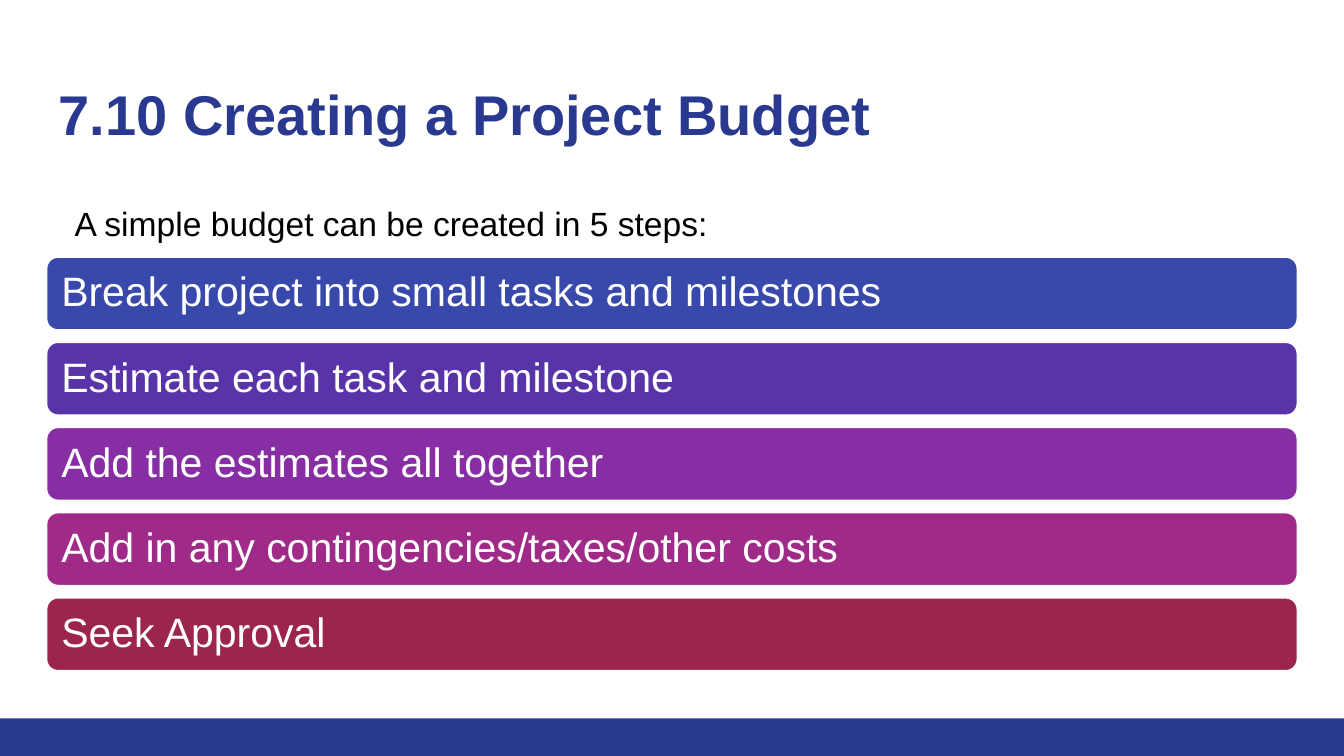
from pptx import Presentation
from pptx.dml.color import RGBColor
from pptx.enum.shapes import MSO_SHAPE
from pptx.enum.text import MSO_ANCHOR, MSO_AUTO_SIZE, PP_ALIGN
from pptx.oxml.ns import qn
from pptx.util import Cm, Pt
from lxml import etree

RECTANGLE, ROUNDED = MSO_SHAPE.RECTANGLE, MSO_SHAPE.ROUNDED_RECTANGLE
TOP, MIDDLE = MSO_ANCHOR.TOP, MSO_ANCHOR.MIDDLE
LEFT = PP_ALIGN.LEFT
NO_FIT = MSO_AUTO_SIZE.NONE

COLOURS = {
    "navy": "2A3990",
    "black": "000000",
    "white": "FFFFFF",
    "blue": "3949AB",
    "violet": "5834A8",
    "purple": "882EA4",
    "magenta": "A02A87",
    "crimson": "9C254D",
}
STEPS = [
    ("Break project into small tasks and milestones", "blue"),
    ("Estimate each task and milestone", "violet"),
    ("Add the estimates all together", "purple"),
    ("Add in any contingencies/taxes/other costs", "magenta"),
    ("Seek Approval", "crimson"),
]
PAGE_WIDTH, PAGE_HEIGHT = 25.4, 14.29
MARGIN = 0.86
CONTENT_WIDTH = PAGE_WIDTH - 2 * MARGIN
FOOTER_HEIGHT = 0.71
STEP_TOP, STEP_HEIGHT, STEP_PITCH = 4.84, 1.42, 1.61


class SlideBuilder:
    font = "Arial"

    def __init__(self, slide):
        self.slide = slide

    def colour(self, name):
        return RGBColor.from_string(COLOURS[name])

    def add_text(self, box, text, size, colour, inset, inset_top, anchor,
                 bold=False, spacing=1.0):
        frame = box.text_frame
        frame.word_wrap = True
        frame.auto_size = NO_FIT
        frame.vertical_anchor = anchor
        frame.margin_left = frame.margin_right = frame.margin_bottom = Cm(inset)
        frame.margin_top = Cm(inset_top)
        para = frame.paragraphs[0]
        para.alignment = LEFT
        para.line_spacing = spacing
        para.space_before = Pt(0)
        span = para.add_run()
        span.text = text
        span.font.name = self.font
        span.font.size = Pt(size)
        span.font.bold = bold
        span.font.color.rgb = self.colour(colour)
        return para

    def place(self, box, top, height):
        box.left, box.top = Cm(MARGIN), Cm(top)
        box.width, box.height = Cm(CONTENT_WIDTH), Cm(height)

    def title(self, text):
        box = self.slide.shapes.title
        self.place(box, 1.14, 1.68)
        self.add_text(box, text, 30, "navy", 0.25, 0.36, TOP, bold=True)

    def intro(self, text):
        box = self.slide.placeholders[1]
        self.place(box, 3.43, 1.68)
        para = self.add_text(box, text, 18, "black", 0.25, 0.3, TOP, spacing=1.15)
        properties = para._p.get_or_add_pPr()
        properties.set("marL", str(Cm(0.3)))
        properties.set("indent", "0")
        etree.SubElement(properties, qn("a:buNone"))

    def bar(self, kind, left, top, width, height, colour):
        shape = self.slide.shapes.add_shape(
            kind, Cm(left), Cm(top), Cm(width), Cm(height))
        shape.shadow.inherit = False
        shape.fill.solid()
        shape.fill.fore_color.rgb = self.colour(colour)
        shape.line.fill.background()
        return shape

    def step(self, index, text, colour):
        top = STEP_TOP + index * STEP_PITCH
        shape = self.bar(ROUNDED, MARGIN, top, CONTENT_WIDTH, STEP_HEIGHT, colour)
        shape.line.color.rgb = self.colour("white")
        shape.line.width = Pt(2)
        self.add_text(shape, text, 22, "white", 0.23, 0.23, MIDDLE, spacing=0.9)


def main():
    deck = Presentation()
    deck.slide_width, deck.slide_height = Cm(PAGE_WIDTH), Cm(PAGE_HEIGHT)
    page = SlideBuilder(deck.slides.add_slide(deck.slide_layouts[1]))

    # Footer band
    page.bar(RECTANGLE, 0, PAGE_HEIGHT - FOOTER_HEIGHT, PAGE_WIDTH,
             FOOTER_HEIGHT, "navy")

    # Heading and introduction
    page.title("7.10 Creating a Project Budget")
    page.intro("A simple budget can be created in 5 steps:")

    # Budget steps
    for index, (text, colour) in enumerate(STEPS):
        page.step(index, text, colour)

    deck.save("out.pptx")


if __name__ == "__main__":
    main()
